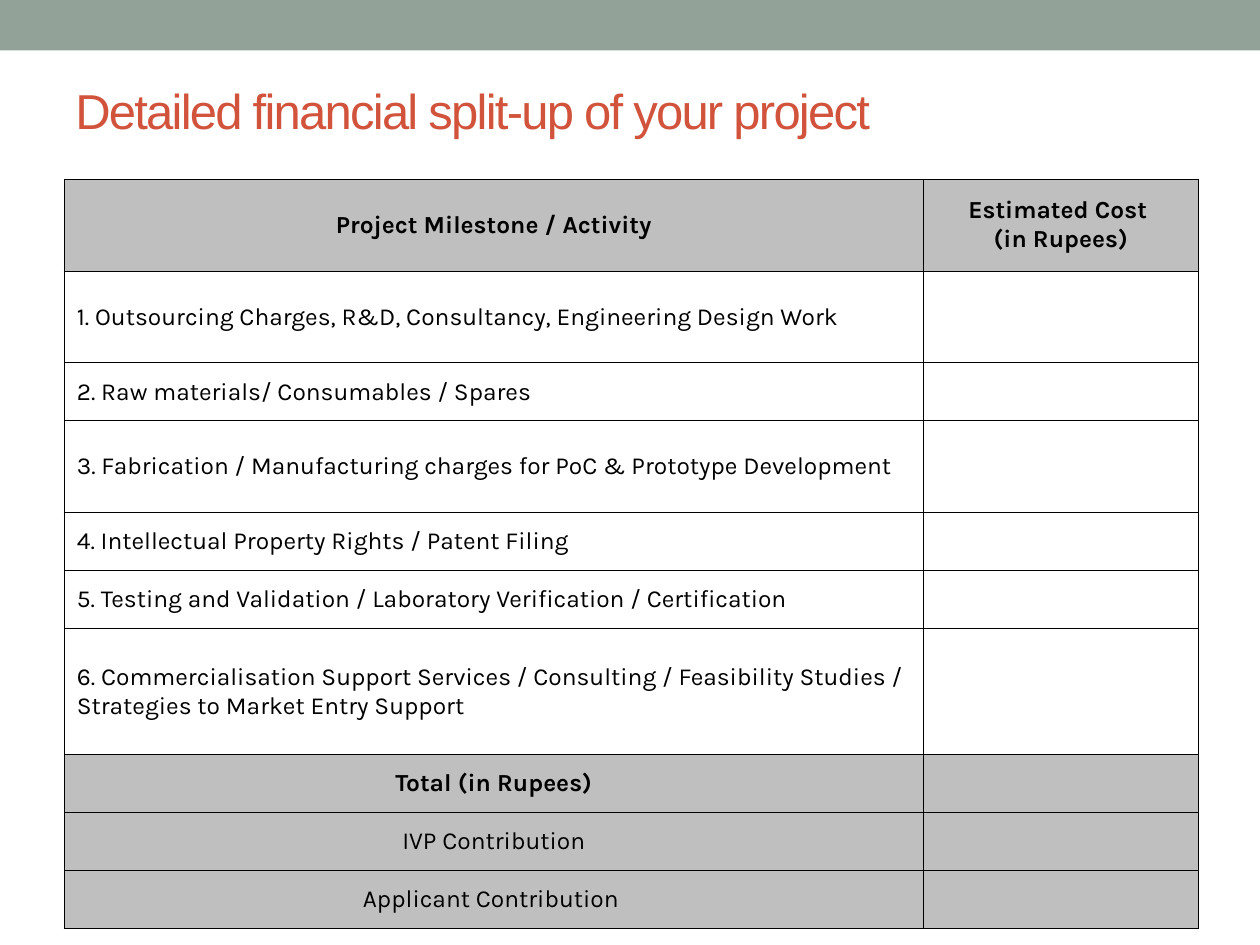
from lxml.etree import SubElement
from pptx import Presentation
from pptx.dml.color import RGBColor as Rgb
from pptx.enum.shapes import MSO_SHAPE as Shape
from pptx.enum.text import MSO_ANCHOR as Anchor, PP_ALIGN as Align
from pptx.oxml.ns import qn
from pptx.util import Inches, Pt

HUES = {"band": "93A299", "title": "D2533C", "text": "000000",
        "grey": "BFBFBF", "white": "FFFFFF", "rule": "000000"}
LOW, MID, HIGH = 0.46, 0.73, 1
ROWS = [
    (MID, "head", "Project Milestone / Activity", "Estimated Cost \n(in Rupees)"),
    (MID, "item", "1. Outsourcing Charges, R&D, Consultancy, Engineering Design Work", ""),
    (LOW, "item", "2. Raw materials/ Consumables / Spares", ""),
    (MID, "item", "3. Fabrication / Manufacturing charges for PoC & Prototype Development", ""),
    (LOW, "item", "4. Intellectual Property Rights / Patent Filing", ""),
    (LOW, "item", "5. Testing and Validation / Laboratory Verification / Certification", ""),
    (HIGH, "item", "6. Commercialisation Support Services / Consulting / Feasibility Studies / "
                   "Strategies to Market Entry Support", ""),
    (LOW, "head", "Total (in Rupees)", ""),
    (LOW, "share", "IVP Contribution", ""),
    (LOW, "share", "Applicant Contribution ", ""),
]
LOOKS = {
    "head": ("grey", {"bold": True, "align": Align.CENTER}),
    "item": ("white", {}),
    "share": ("grey", {"align": Align.CENTER}),
}


def write(frame, text, size=14, font="Karla", hue="text", bold=False,
          align=Align.LEFT, track=0):
    frame.word_wrap = True
    for num, line in enumerate(text.split("\n")):
        para = frame.add_paragraph() if num else frame.paragraphs[0]
        para.alignment = align
        para.font.size = Pt(size)
        if not line:
            continue
        run = para.add_run()
        run.text = line
        run.font.size = Pt(size)
        run.font.name = font
        run.font.bold = bold
        run.font.color.rgb = Rgb.from_string(HUES[hue])
        if track:
            run.font._element.set("spc", str(track * 100))


class Deck:
    def __init__(self, wide, high):
        self.show = Presentation()
        self.show.slide_width, self.show.slide_height = Inches(wide), Inches(high)
        self.slide = self.show.slides.add_slide(self.show.slide_layouts[6])

    def paint(self, item, hue):
        item.fill.solid()
        item.fill.fore_color.rgb = Rgb.from_string(HUES[hue])

    def band(self, *area, hue):
        bar = self.slide.shapes.add_shape(Shape.RECTANGLE, *map(Inches, area))
        bar.shadow.inherit = False
        self.paint(bar, hue)
        bar.line.fill.background()

    def label(self, *area, text, **look):
        box = self.slide.shapes.add_textbox(*map(Inches, area))
        box.text_frame.vertical_anchor = Anchor.MIDDLE
        write(box.text_frame, text, **look)

    def edge(self, cell):
        props = cell._tc.get_or_add_tcPr()
        for side in ("a:lnL", "a:lnR", "a:lnT", "a:lnB"):
            line = SubElement(props, qn(side), w=str(Pt(0.5)))
            fill = SubElement(line, qn("a:solidFill"))
            SubElement(fill, qn("a:srgbClr"), val=HUES["rule"])

    def table(self, left, top, cols, rows):
        high = sum(row[0] for row in rows)
        area = map(Inches, (left, top, sum(cols), high))
        grid = self.slide.shapes.add_table(len(rows), len(cols), *area).table
        for col, wide in zip(grid.columns, cols):
            col.width = Inches(wide)
        for row, (tall, kind, *texts) in zip(grid.rows, rows):
            row.height = Inches(tall)
            hue, look = LOOKS[kind]
            for cell, text in zip(row.cells, texts):
                cell.vertical_anchor = Anchor.MIDDLE
                cell.margin_left = cell.margin_right = Inches(0.1)
                cell.margin_top = cell.margin_bottom = Inches(0.07)
                self.edge(cell)
                self.paint(cell, hue)
                write(cell.text_frame, text, **look)


def main():
    deck = Deck(10, 7.5)
    deck.band(0, 0, 10, 0.4, hue="band")
    deck.label(0.5, 0.33, 9, 1.08, text="Detailed financial split-up of your project",
               size=28, font="Arial", hue="title", track=-1)
    deck.table(0.51, 1.42, (6.82, 2.18), ROWS)
    deck.show.save("out.pptx")


if __name__ == "__main__":
    main()
